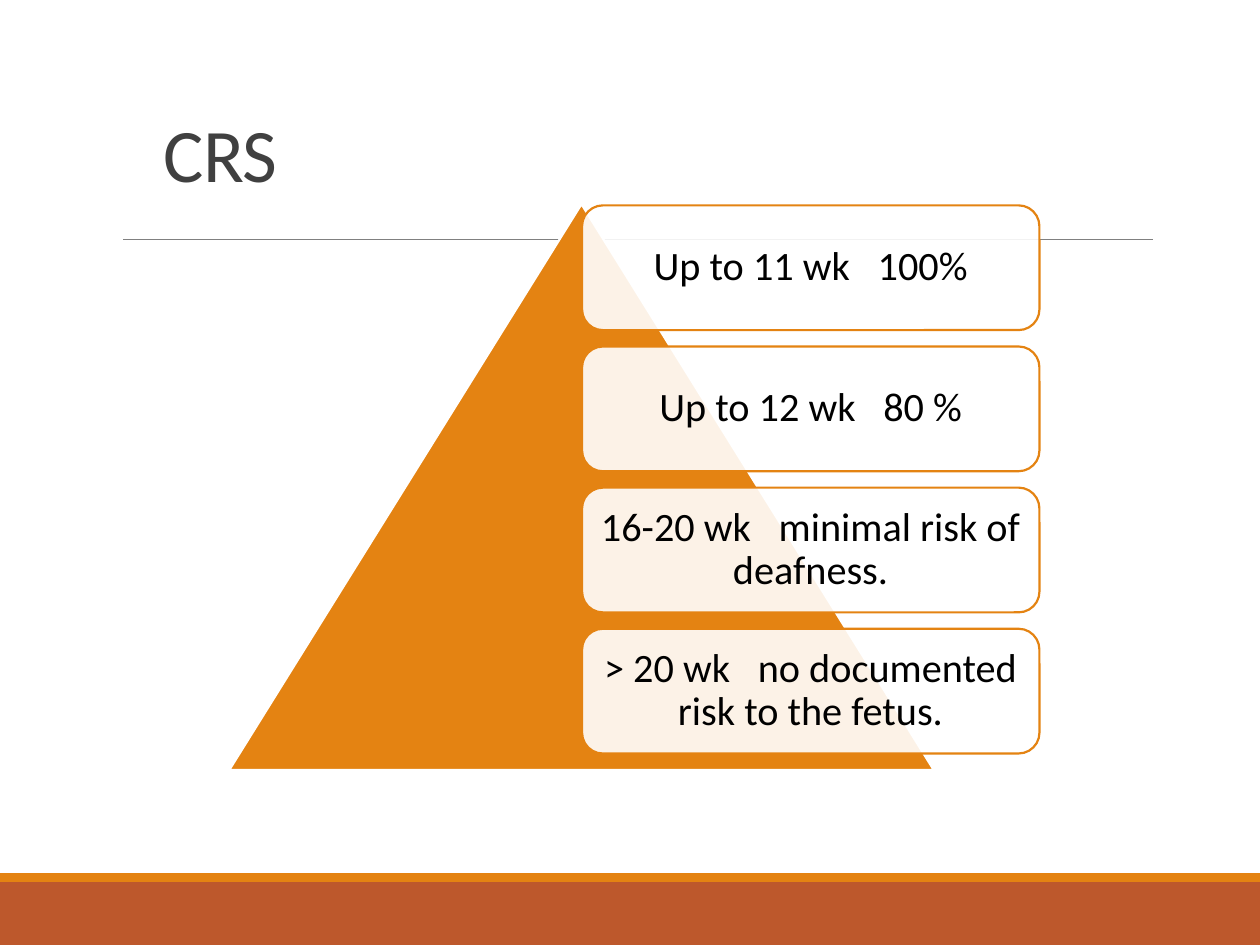
from dataclasses import dataclass

from lxml.etree import SubElement
from pptx import Presentation
from pptx.dml.color import RGBColor
from pptx.enum.shapes import MSO_CONNECTOR, MSO_SHAPE
from pptx.enum.text import MSO_ANCHOR, MSO_AUTO_SIZE, PP_ALIGN
from pptx.oxml.ns import qn
from pptx.util import Inches, Pt


@dataclass(frozen=True)
class Theme:
    font: str = "Calibri"
    orange: RGBColor = RGBColor(0xE4, 0x83, 0x12)
    rust: RGBColor = RGBColor(0xBD, 0x58, 0x2C)
    rule: RGBColor = RGBColor(0x80, 0x80, 0x80)
    heading: RGBColor = RGBColor(0x40, 0x40, 0x40)
    text: RGBColor = RGBColor(0, 0, 0)
    white: RGBColor = RGBColor(0xFF, 0xFF, 0xFF)
    heading_size: Pt = Pt(43.2)
    card_size: Pt = Pt(23)
    outline: Pt = Pt(1.25)


theme = Theme()


def add_filled(kind, left, top, width, height, fill, line=None):
    shape = slide.shapes.add_shape(
        kind, Inches(left), Inches(top), Inches(width), Inches(height))
    shape.shadow.inherit = False
    shape.fill.solid()
    shape.fill.fore_color.rgb = fill
    if line is None:
        shape.line.fill.background()
    else:
        shape.line.color.rgb = line
        shape.line.width = theme.outline
    return shape


def add_run(paragraph, text, size, color, spacing=0):
    run = paragraph.add_run()
    run.text = text
    run.font.name = theme.font
    run.font.size = size
    run.font.color.rgb = color
    if spacing:
        run.font._element.set("spc", str(int(spacing * 100)))


prs = Presentation()
prs.slide_width, prs.slide_height = Inches(10), Inches(7.5)
slide = prs.slides.add_slide(prs.slide_layouts[5])

# Footer bands
add_filled(MSO_SHAPE.RECTANGLE, 0, 7, 10, 0.5, theme.rust)
add_filled(MSO_SHAPE.RECTANGLE, 0, 6.93, 10, 0.07, theme.orange)

# Rule under the title
title_rule = slide.shapes.add_connector(
    MSO_CONNECTOR.STRAIGHT, Inches(0.98), Inches(1.9), Inches(9.15), Inches(1.9))
title_rule.line.color.rgb = theme.rule
title_rule.line.width = Pt(0.5)
SubElement(title_rule._element.spPr, qn("a:effectLst"))

# Title
title = slide.shapes.title
title.left, title.top = Inches(1.2), Inches(0.89)
title.width, title.height = Inches(7.62), Inches(0.73)
title.text_frame.auto_size = MSO_AUTO_SIZE.NONE
title.text_frame.vertical_anchor = MSO_ANCHOR.BOTTOM
heading = title.text_frame.paragraphs[0]
heading.alignment = PP_ALIGN.LEFT
heading.line_spacing = 0.85
add_run(heading, "CRS", theme.heading_size, theme.heading, spacing=-0.5)

# Pyramid
add_filled(MSO_SHAPE.ISOSCELES_TRIANGLE, 1.82, 1.62, 5.59, 4.49,
           theme.orange, theme.white)

# Risk cards, evenly stacked over the pyramid
risks = [
    ("Up to 11 wk", "100%"),
    ("Up to 12 wk", "80 %"),
    ("16-20 wk", "minimal risk of deafness."),
    ("> 20 wk", "no documented risk to the fetus."),
]
card_top, card_pitch = 1.63, 1.12
for row, (period, risk) in enumerate(risks):
    card = add_filled(MSO_SHAPE.ROUNDED_RECTANGLE, 4.62, card_top + row * card_pitch,
                      3.63, 0.99, theme.white, theme.orange)
    card_color = card.fill._xPr.find(qn("a:solidFill"))[0]
    SubElement(card_color, qn("a:alpha")).set("val", "90000")

    frame = card.text_frame
    frame.word_wrap = True
    frame.vertical_anchor = MSO_ANCHOR.MIDDLE
    frame.margin_left = frame.margin_right = Inches(0.09)
    frame.margin_top = frame.margin_bottom = Inches(0.1)
    entry = frame.paragraphs[0]
    entry.alignment = PP_ALIGN.CENTER
    entry.line_spacing = 0.9
    add_run(entry, period, theme.card_size, theme.text)
    add_run(entry, " ", theme.card_size, theme.text, spacing=10.4)  # wide gap
    add_run(entry, risk, theme.card_size, theme.text)

prs.save("out.pptx")
